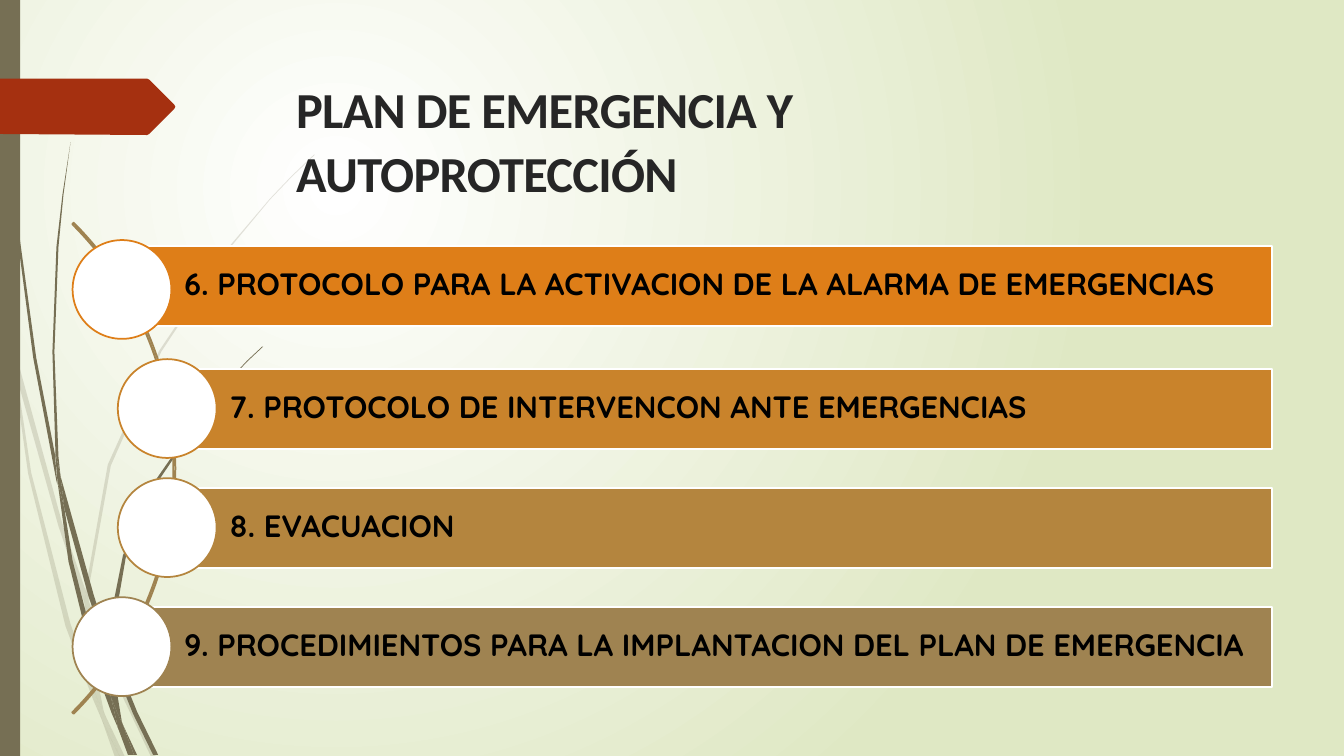
from dataclasses import dataclass

from lxml import etree
from pptx import Presentation
from pptx.dml.color import RGBColor
from pptx.enum.shapes import MSO_SHAPE
from pptx.enum.text import MSO_ANCHOR, MSO_AUTO_SIZE, PP_ALIGN
from pptx.oxml.ns import qn
from pptx.util import Cm, Pt

RECT, OVAL, ARC = MSO_SHAPE.RECTANGLE, MSO_SHAPE.OVAL, MSO_SHAPE.BLOCK_ARC
TOP, MIDDLE = MSO_ANCHOR.TOP, MSO_ANCHOR.MIDDLE
LEFT, NO_FIT = PP_ALIGN.LEFT, MSO_AUTO_SIZE.NONE


@dataclass(frozen=True)
class Theme:
    white: str = "FFFFFF"
    mist: str = "DFE8C4"
    grass: str = "766F54"
    red: str = "A53010"
    arc: str = "9F8351"
    title_ink: str = "262626"
    ink: str = "000000"
    title_font: str = "Calibri"
    body_font: str = "Quicksand"
    title_size: int = 36
    body_size: int = 22
    outline: float = 1.25


# Outlines are in hundredths of an inch.
PALE_GRASS = [
    [(11, 350), (9, 322), (0, 282), (0, 299), (10, 344)],
    [(58, 522), (84, 599), (85, 586), (62, 520), (14, 345), (17, 376)],
    [(92, 607), (88, 596), (88, 610), (123, 694), (150, 751), (155, 751), (127, 692)],
    [(119, 751), (124, 751), (105, 711)],
    [(93, 683), (70, 619), (31, 469), (17, 376), (11, 350), (28, 470), (65, 621),
     (92, 693), (101, 714), (99, 707)],
    [(84, 599), (87, 646), (93, 683), (96, 692), (105, 711), (103, 706), (91, 646),
     (88, 610), (88, 608)],
    [(88, 584), (110, 462), (160, 349), (229, 245), (268, 198), (290, 175), (312, 154),
     (312, 153), (289, 175), (268, 197), (228, 244), (158, 348), (107, 461), (85, 584),
     (85, 586), (88, 596)],
    [(101, 714), (114, 751), (119, 751)],
    [(88, 608), (88, 610), (88, 596), (85, 586), (84, 599)],
    [(96, 692), (93, 683), (99, 707), (101, 714), (119, 751), (105, 711)],
]
DARK_GRASS = [
    [(7, 110), (17, 233), (33, 355), (56, 477), (57, 481), (55, 457), (55, 453),
     (36, 355), (19, 232), (8, 109), (5, 48), (4, 0), (3, 0), (4, 48)],
    [(88, 592), (106, 645), (106, 633), (106, 631), (93, 590), (60, 472), (64, 505)],
    [(113, 649), (110, 641), (111, 656), (132, 708), (152, 749), (157, 749), (136, 706)],
    [(110, 691), (98, 657), (72, 556), (64, 505), (57, 477), (68, 557), (93, 659),
     (111, 708), (117, 722), (116, 717)],
    [(60, 472), (58, 453), (54, 349), (58, 245), (63, 193), (70, 141), (62, 193),
     (56, 245), (52, 349), (55, 449)],
    [(133, 749), (136, 749), (122, 719)],
    [(57, 477), (64, 505), (60, 472), (55, 449), (55, 453)],
    [(111, 633), (125, 552), (158, 476), (205, 406), (231, 374), (245, 359), (261, 344),
     (260, 344), (245, 358), (231, 373), (204, 405), (156, 474), (122, 551), (106, 631),
     (110, 641)],
    [(117, 722), (127, 749), (131, 749)],
    [(106, 645), (110, 691), (116, 706), (122, 719), (121, 716), (111, 656), (109, 651)],
    [(106, 645), (109, 651), (111, 656), (110, 641), (106, 631), (106, 633)],
    [(116, 706), (110, 691), (116, 717), (117, 722), (130, 749), (133, 749), (122, 719)],
]
RED_TAB = [(0, 78), (146, 78), (148, 79), (173, 104), (174, 106), (173, 108),
           (148, 133), (146, 134), (0, 133)]

# Text, colour, circle left, bar top below circle top (cm)
SECTIONS = [
    ("6. PROTOCOLO PARA LA ACTIVACION DE LA ALARMA DE EMERGENCIAS", "DE7E18", 1.83, 0.15),
    ("7. PROTOCOLO DE INTERVENCON ANTE EMERGENCIAS", "C9832B", 2.97, 0.25),
    ("8. EVACUACION", "B4853E", 2.97, 0.25),
    ("9. PROCEDIMIENTOS PARA LA IMPLANTACION DEL PLAN DE EMERGENCIA", "9F8351", 1.83, 0.25),
]
FIRST_TOP, PITCH = 6.05, 3.0
CIRCLE, BAR_HEIGHT, BAR_RIGHT = 2.49, 2.01, 32.05


class Deck:
    def __init__(self, theme):
        self.theme = theme
        self.prs = Presentation()
        self.prs.slide_width, self.prs.slide_height = Cm(33.87), Cm(19.05)
        self.s = self.prs.slides.add_slide(self.prs.slide_layouts[5])

    def background(self):
        """Circular gradient centred in the upper left quarter."""
        fill = self.s.background.fill
        fill.gradient()
        for stop, color in zip(fill.gradient_stops, (self.theme.white, self.theme.mist)):
            stop.color.rgb = RGBColor.from_string(color)
        lin = self.s.element.find(".//" + qn("a:lin"))
        path = etree.Element(qn("a:path"), {"path": "circle"})
        etree.SubElement(path, qn("a:fillToRect"), l="50000", t="50000", r="100000", b="100000")
        lin.getparent().replace(lin, path)

    def paint(self, sp, fill=None, line=None):
        sp.shadow.inherit = False
        if fill:
            sp.fill.solid()
            sp.fill.fore_color.rgb = RGBColor.from_string(fill)
        else:
            sp.fill.background()
        if line:
            sp.line.color.rgb = RGBColor.from_string(line)
            sp.line.width = Pt(self.theme.outline)
        else:
            sp.line.fill.background()
        return sp

    def shape(self, kind, x, y, w, h, fill=None, line=None):
        sp = self.s.shapes.add_shape(kind, Cm(x), Cm(y), Cm(w), Cm(h))
        return self.paint(sp, fill, line)

    def outline(self, points, fill, opacity=100):
        builder = self.s.shapes.build_freeform(*points[0], scale=Cm(2.54) / 100)
        builder.add_line_segments(points[1:], close=True)
        sp = self.paint(builder.convert_to_shape(), fill)
        if opacity < 100:
            color = sp.element.spPr.find(".//" + qn("a:srgbClr"))
            etree.SubElement(color, qn("a:alpha"), val=str(opacity * 1000))

    def text(self, sp, text, font, size, color, spacing):
        tf = sp.text_frame
        tf.text = text
        tf.word_wrap = True
        tf.auto_size = NO_FIT
        p = tf.paragraphs[0]
        p.alignment = LEFT
        p.line_spacing = spacing
        r = p.runs[0]
        r.font.name, r.font.size, r.font.bold = font, Pt(size), True
        r.font.color.rgb = RGBColor.from_string(color)
        return tf

    def section(self, text, color, x, y, bar_drop):
        """Coloured bar with a white circle over its left end."""
        t = self.theme
        left = x + CIRCLE / 2
        bar = self.shape(RECT, left, y + bar_drop, BAR_RIGHT - left, BAR_HEIGHT, color, t.white)
        tf = self.text(bar, text, t.body_font, t.body_size, t.ink, 0.9)
        tf.vertical_anchor = MIDDLE
        tf.margin_left = Cm(1.57)
        tf.margin_right = tf.margin_top = tf.margin_bottom = Cm(0.15)
        self.shape(OVAL, x, y, CIRCLE, CIRCLE, t.white, color)

    def title(self, text):
        t = self.theme
        sp = self.s.shapes.title
        sp.left, sp.top, sp.width, sp.height = Cm(7.21), Cm(1.73), Cm(22.07), Cm(1.9)
        tf = self.text(sp, text, t.title_font, t.title_size, t.title_ink, 1.07)
        tf.vertical_anchor = TOP
        tf.paragraphs[0].space_after = Pt(8)
        tf.paragraphs[0].runs[0].font._element.set("spc", "-50")
        sp.element.getparent().append(sp.element)


def main():
    theme = Theme()
    deck = Deck(theme)
    deck.background()
    for blades, opacity in ((PALE_GRASS, 20), (DARK_GRASS, 100)):
        for blade in blades:
            deck.outline(blade, theme.grass, opacity)
    deck.shape(RECT, 0, 0, 0.51, 19.05, theme.grass)
    deck.outline(RED_TAB, theme.red)

    arc = deck.shape(ARC, -13.08, 3.05, 17.5, 17.5, line=theme.arc)
    for i, value in enumerate((189, 27, 0.003)):
        arc.adjustments[i] = value
    for i, (text, color, x, bar_drop) in enumerate(SECTIONS):
        deck.section(text, color, x, FIRST_TOP + i * PITCH, bar_drop)

    deck.title("PLAN DE EMERGENCIA Y AUTOPROTECCIÓN")
    deck.prs.save("out.pptx")


if __name__ == "__main__":
    main()
